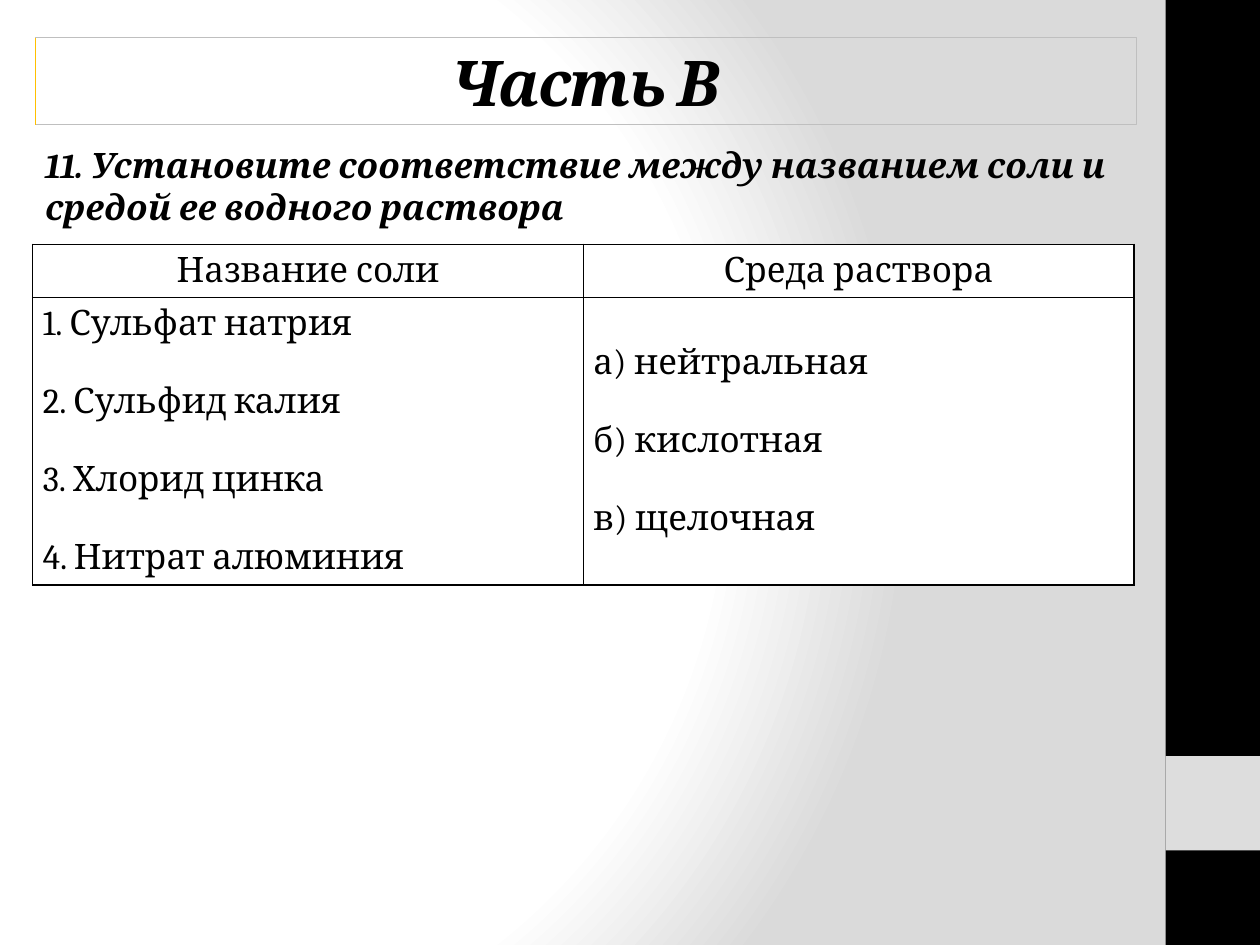
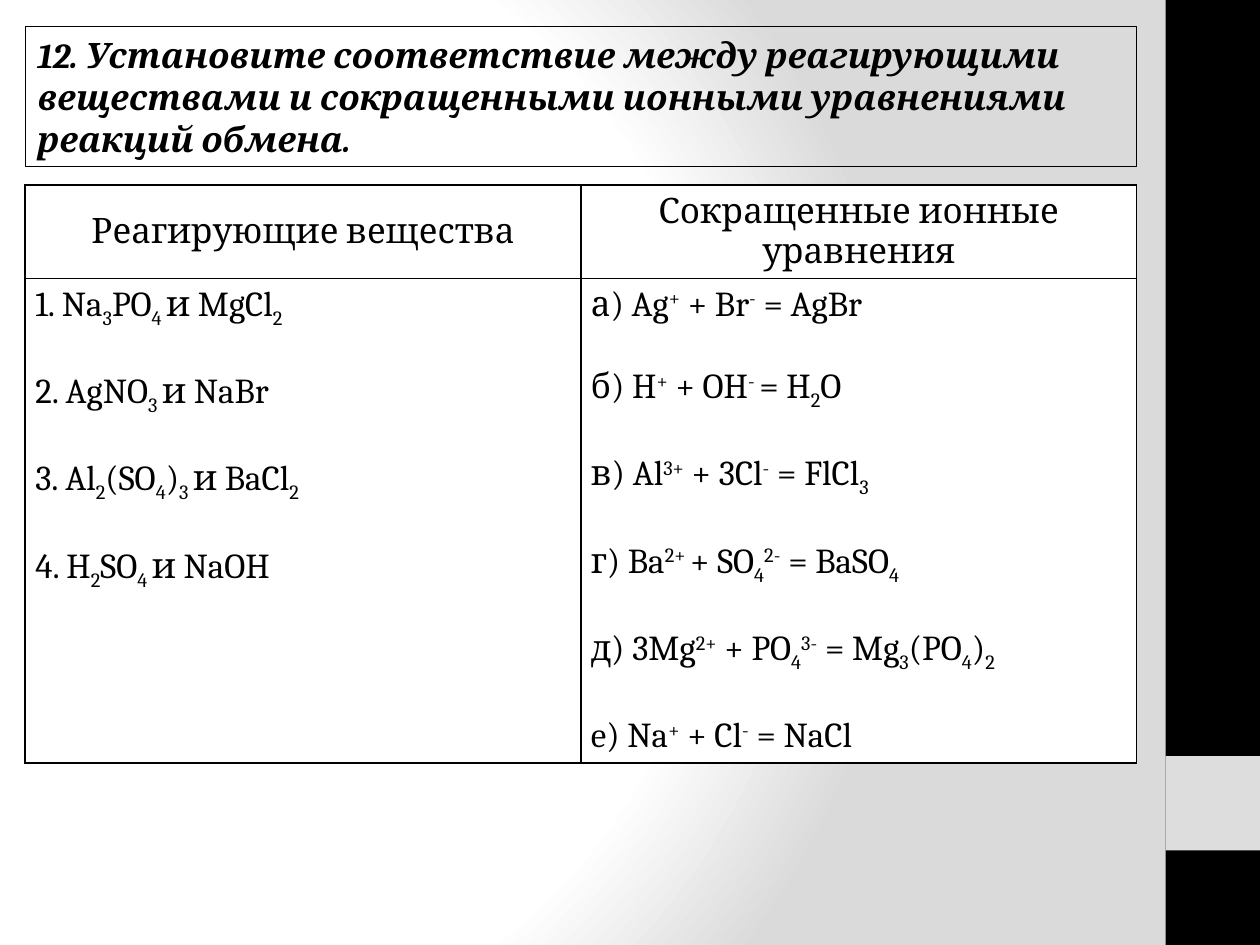
from lxml import etree
from pptx import Presentation
from pptx.dml.color import RGBColor
from pptx.enum import shapes, text
from pptx.oxml import parse_xml
from pptx.oxml.ns import nsdecls, qn
from pptx.util import Inches, Pt

COLORS = {
    "ink": "000000",
    "paper": "FFFFFF",
    "shade": "DADADA",
    "tab": "DDDDDD",
    "frame": "BFBFBF",
    "accent": "FFC000",
}
FONT = "Cambria"
BASELINES = {"_": "-25000", "^": "30000"}
CENTER, JUSTIFY, LEFT = text.PP_ALIGN.CENTER, text.PP_ALIGN.JUSTIFY, text.PP_ALIGN.LEFT
TOP, MIDDLE = text.MSO_ANCHOR.TOP, text.MSO_ANCHOR.MIDDLE

SALTS = ["1. Сульфат натрия", "2. Сульфид калия", "3. Хлорид цинка", "4. Нитрат алюминия"]
MEDIA = ["а) нейтральная", "б) кислотная", "в) щелочная"]

# "|" separates runs; a leading "_" lowers a run and "^" raises it
REAGENTS = [
    "1. Na|_3|PO|_4 |и MgCl|_2",
    "2. AgNO|_3 |и NaBr",
    "3. Al|_2|(SO|_4|)|_3 |и BaCl|_2",
    "4. H|_2|SO|_4 |и NaOH",
]
EQUATIONS = [
    "а) Ag|^+| + Br|^-| = AgBr",
    "б) H|^+| + OH|^- |= H|_2|O",
    "в) Al|^3+| + 3Cl|^-| = FlCl|_3",
    "г) Ba|^2+ |+ SO|_4|^2-| = BaSO|_4",
    "д) 3Mg|^2+| + PO|_4|^3-| = Mg|_3|(PO|_4|)|_2",
    "e) Na|^+| + Cl|^-| = NaCl",
]


def rgb(name):
    return RGBColor.from_string(COLORS[name])


def style_run(run, size=20, strong=False):
    run.font.name = FONT
    run.font.size = Pt(size)
    run.font.color.rgb = rgb("ink")
    run.font.bold = run.font.italic = strong


def set_background(master):
    """Circular gradient shared by every slide."""
    master.background.fill.gradient()
    stops = "".join(
        f'<a:gs pos="{position}000"><a:srgbClr val="{COLORS[name]}"/></a:gs>'
        for position, name in ((0, "paper"), (75, "paper"), (100, "shade"))
    )
    gradient = parse_xml(
        f'<a:gradFill {nsdecls("a")} rotWithShape="1"><a:gsLst>{stops}</a:gsLst>'
        '<a:path path="circle"><a:fillToRect l="20000" t="50000" r="100000" b="50000"/>'
        "</a:path></a:gradFill>"
    )
    plain = next(master.element.iter(qn("a:gradFill")))
    plain.getparent().replace(plain, gradient)


def add_box(slide, box, fill=None, line=None):
    shape = slide.shapes.add_shape(shapes.MSO_SHAPE.RECTANGLE, *map(Inches, box))
    shape.shadow.inherit = False
    if fill:
        shape.fill.solid()
        shape.fill.fore_color.rgb = rgb(fill)
    else:
        shape.fill.background()
    if line:
        shape.line.color.rgb = rgb(line)
        shape.line.width = Pt(0.75)
    else:
        shape.line.fill.background()
    return shape


def add_side_band(slide, box):
    left, top, width, height = box
    add_box(slide, box, fill="ink")
    add_box(slide, (left, top + height - 2 * width, width, width), fill="tab")


def write_heading(shape, words, size=20, align=LEFT, anchor=MIDDLE):
    frame = shape.text_frame
    frame.word_wrap = True
    frame.vertical_anchor = anchor
    frame.text = words
    frame.paragraphs[0].alignment = align
    style_run(frame.paragraphs[0].runs[0], size, strong=True)
    return frame


def add_title(slide, box, words):
    left, top, _, height = box
    frame = write_heading(add_box(slide, box, line="frame"), words, 36, CENTER)
    frame.paragraphs[0].runs[0].font._element.set("spc", "-100")
    # Accent on the left edge
    edge = slide.shapes.add_connector(
        shapes.MSO_CONNECTOR.STRAIGHT, *map(Inches, (left, top, left, top + height)))
    edge.line.color.rgb = rgb("accent")
    edge.line.width = Pt(0.75)
    etree.SubElement(edge._element.spPr, qn("a:effectLst"))


def fill_cell(cell, lines, align, spacing, anchor):
    cell.fill.solid()
    cell.fill.fore_color.rgb = rgb("paper")
    cell.vertical_anchor = anchor
    cell.margin_left = cell.margin_right = Inches(0.08)
    cell.margin_top = cell.margin_bottom = Inches(0.05)
    # Borders precede the fill in the cell properties
    for index, side in enumerate("LRTB"):
        cell._tc.tcPr.insert(index, parse_xml(
            f'<a:ln{side} {nsdecls("a")} w="12700"><a:solidFill>'
            f'<a:srgbClr val="{COLORS["ink"]}"/></a:solidFill></a:ln{side}>'))
    frame = cell.text_frame
    for index, line in enumerate(lines):
        paragraph = frame.add_paragraph() if index else frame.paragraphs[0]
        paragraph.alignment = align
        paragraph.space_before, paragraph.space_after = map(Pt, spacing)
        for piece in line.split("|"):
            run = paragraph.add_run()
            run.text = piece.lstrip("_^")
            style_run(run)
            if piece[0] in BASELINES:
                run.font._element.set("baseline", BASELINES[piece[0]])


def add_matching_table(slide, box, header_height, headers, columns, aligns, spacing, anchor):
    left, top, width, height = box
    table = slide.shapes.add_table(2, 2, *map(Inches, box)).table
    table.first_row = table.horz_banding = False
    table.rows[0].height = Inches(header_height)
    table.rows[1].height = Inches(height - header_height)
    for index, (header, lines, align) in enumerate(zip(headers, columns, aligns)):
        table.columns[index].width = Inches(width / 2)
        fill_cell(table.cell(0, index), [header], CENTER, (12, 12), MIDDLE)
        fill_cell(table.cell(1, index), lines, align, spacing, anchor)


def build_salts_slide(slide):
    add_title(slide, (0.28, 0.3, 8.74, 0.69), "Часть В")
    add_matching_table(
        slide, (0.26, 1.94, 8.74, 2.69), 0.41, ["Название соли", "Среда раствора"],
        [SALTS, MEDIA], [JUSTIFY, JUSTIFY], (7.2, 14.4), MIDDLE)
    task = slide.shapes.add_textbox(*map(Inches, (0.26, 1.07, 8.74, 1.08)))
    frame = write_heading(
        task, "11. Установите соответствие между названием соли и средой ее водного раствора",
        anchor=TOP)
    frame.margin_top = Inches(0.07)


def build_reactions_slide(slide):
    add_matching_table(
        slide, (0.2, 1.47, 8.82, 4.58), 0.74,
        ["Реагирующие вещества", "Сокращенные ионные уравнения"],
        [REAGENTS, EQUATIONS], [JUSTIFY, LEFT], (12, 12), TOP)
    write_heading(
        add_box(slide, (0.2, 0.21, 8.82, 1.11), line="ink"),
        "12. Установите соответствие между реагирующими веществами и сокращенными "
        "ионными уравнениями реакций обмена.")


def main():
    deck = Presentation()
    deck.slide_width, deck.slide_height = Inches(10), Inches(7.5)
    set_background(deck.slide_master)
    for build in (build_salts_slide, build_reactions_slide):
        slide = deck.slides.add_slide(deck.slide_layouts[6])
        add_side_band(slide, (9.25, 0, 0.75, 7.5))
        build(slide)
    deck.save("out.pptx")


if __name__ == "__main__":
    main()
